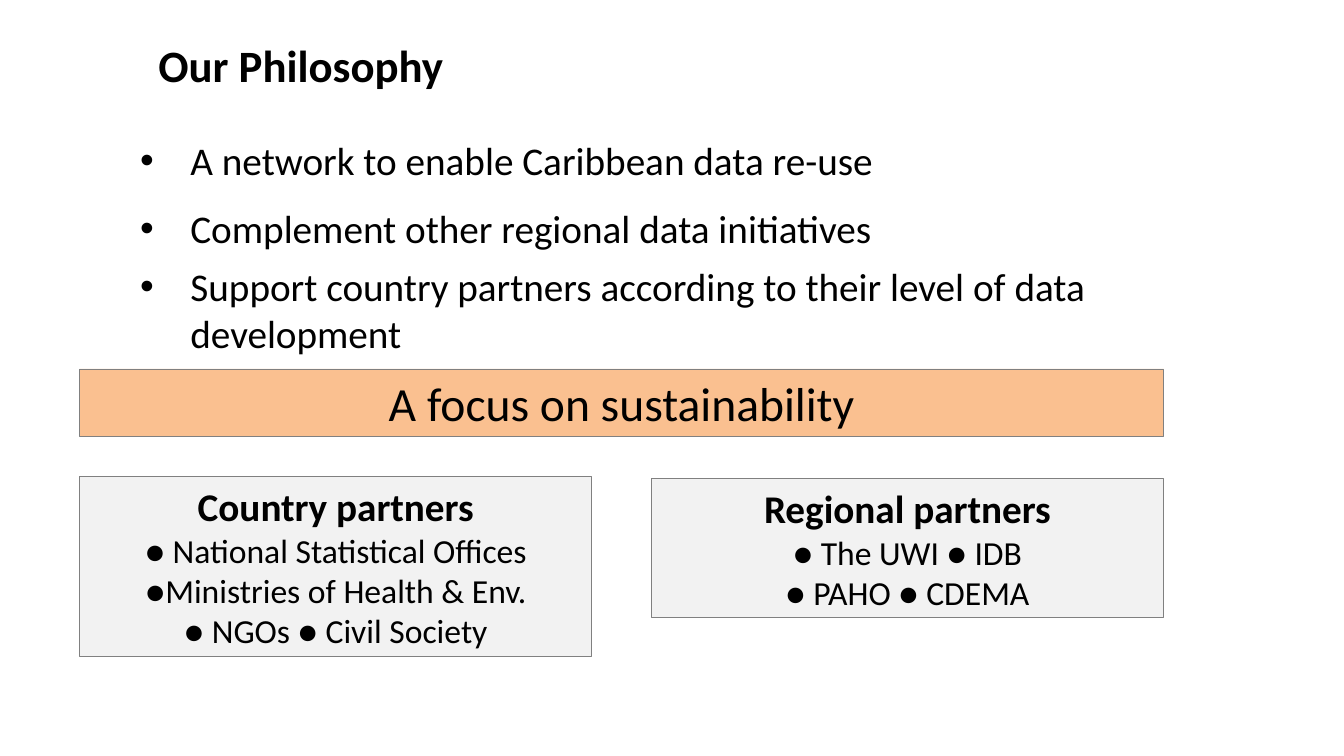
from dataclasses import dataclass

from lxml.etree import SubElement
from pptx import Presentation
from pptx.dml.color import RGBColor
from pptx.enum.shapes import MSO_SHAPE
from pptx.enum.text import MSO_ANCHOR, MSO_AUTO_SIZE, PP_ALIGN
from pptx.oxml.ns import qn
from pptx.slide import Slide
from pptx.text.text import TextFrame, _Paragraph
from pptx.util import Inches, Pt

FONT = "Calibri"
LEFT, FULL_WIDTH = 0.79, 10.75
PARTNER_WIDTH = 5.08


@dataclass
class Line:
    text: str
    size: float
    bold: bool = False


@dataclass
class Panel:
    left: float
    top: float
    width: float
    height: float
    fill: str
    lines: list[Line]


@dataclass
class Bullet:
    top: float
    height: float
    text: str


PANELS = [
    Panel(LEFT + FULL_WIDTH - PARTNER_WIDTH, 4.75, PARTNER_WIDTH, 1.38, "F2F2F2", [
        Line("Regional partners", 28, True),
        Line("● The UWI ● IDB", 24),
        Line("● PAHO ● CDEMA", 24),
    ]),
    Panel(LEFT, 4.73, PARTNER_WIDTH, 1.78, "F2F2F2", [
        Line("Country partners", 28, True),
        Line("● National Statistical Offices", 24),
        Line("●Ministries of Health & Env.", 24),
        Line("● NGOs ● Civil Society", 24),
    ]),
    Panel(LEFT, 3.66, FULL_WIDTH, 0.67, "FAC090", [
        Line("A focus on sustainability", 34),
    ]),
]

BULLETS = [
    Bullet(1.3, 0.57, "A network to enable Caribbean data re-use"),
    Bullet(1.98, 0.57, "Complement other regional data initiatives"),
    Bullet(2.55, 1.04, "Support country partners according to their level of data development"),
]


def color(hex_code: str) -> RGBColor:
    return RGBColor.from_string(hex_code)


def write_line(p: _Paragraph, line: Line, align: PP_ALIGN) -> None:
    p.text = line.text
    p.alignment = align
    for r in p.runs:
        r.font.name = FONT
        r.font.size = Pt(line.size)
        r.font.bold = line.bold
        r.font.color.rgb = color("000000")


def set_frame(tf: TextFrame, anchor: MSO_ANCHOR) -> None:
    tf.word_wrap = True
    tf.auto_size = MSO_AUTO_SIZE.NONE
    tf.vertical_anchor = anchor


def add_title(s: Slide) -> None:
    sp = s.shapes.title
    sp.left, sp.top = Inches(1.47), Inches(0.32)
    sp.width, sp.height = Inches(10.08), Inches(0.64)
    set_frame(sp.text_frame, MSO_ANCHOR.TOP)
    write_line(sp.text_frame.paragraphs[0], Line("Our Philosophy", 32, True), PP_ALIGN.LEFT)


def add_bullet(s: Slide, bullet: Bullet) -> None:
    sp = s.shapes.add_textbox(Inches(LEFT), Inches(bullet.top),
                              Inches(FULL_WIDTH), Inches(bullet.height))
    set_frame(sp.text_frame, MSO_ANCHOR.TOP)
    p = sp.text_frame.paragraphs[0]
    p.level = 1
    pPr = p._p.get_or_add_pPr()
    pPr.set("marL", str(Inches(1)))
    pPr.set("indent", str(Inches(-0.5)))
    SubElement(pPr, qn("a:buFont"), typeface="Arial")
    SubElement(pPr, qn("a:buChar"), char="•")
    write_line(p, Line(bullet.text, 28), PP_ALIGN.LEFT)


def add_panel(s: Slide, panel: Panel) -> None:
    sp = s.shapes.add_shape(MSO_SHAPE.RECTANGLE, Inches(panel.left), Inches(panel.top),
                            Inches(panel.width), Inches(panel.height))
    sp.shadow.inherit = False
    sp.fill.solid()
    sp.fill.fore_color.rgb = color(panel.fill)
    sp.line.color.rgb = color("808080")
    sp.line.width = Pt(0.5)
    tf = sp.text_frame
    set_frame(tf, MSO_ANCHOR.MIDDLE)
    for i, line in enumerate(panel.lines):
        p = tf.add_paragraph() if i else tf.paragraphs[0]
        write_line(p, line, PP_ALIGN.CENTER)


def main() -> None:
    prs = Presentation()
    prs.slide_width, prs.slide_height = Inches(13.33), Inches(7.5)
    s = prs.slides.add_slide(prs.slide_layouts[5])
    add_title(s)
    for bullet in BULLETS:
        add_bullet(s, bullet)
    for panel in PANELS:
        add_panel(s, panel)
    prs.save("out.pptx")


if __name__ == "__main__":
    main()
